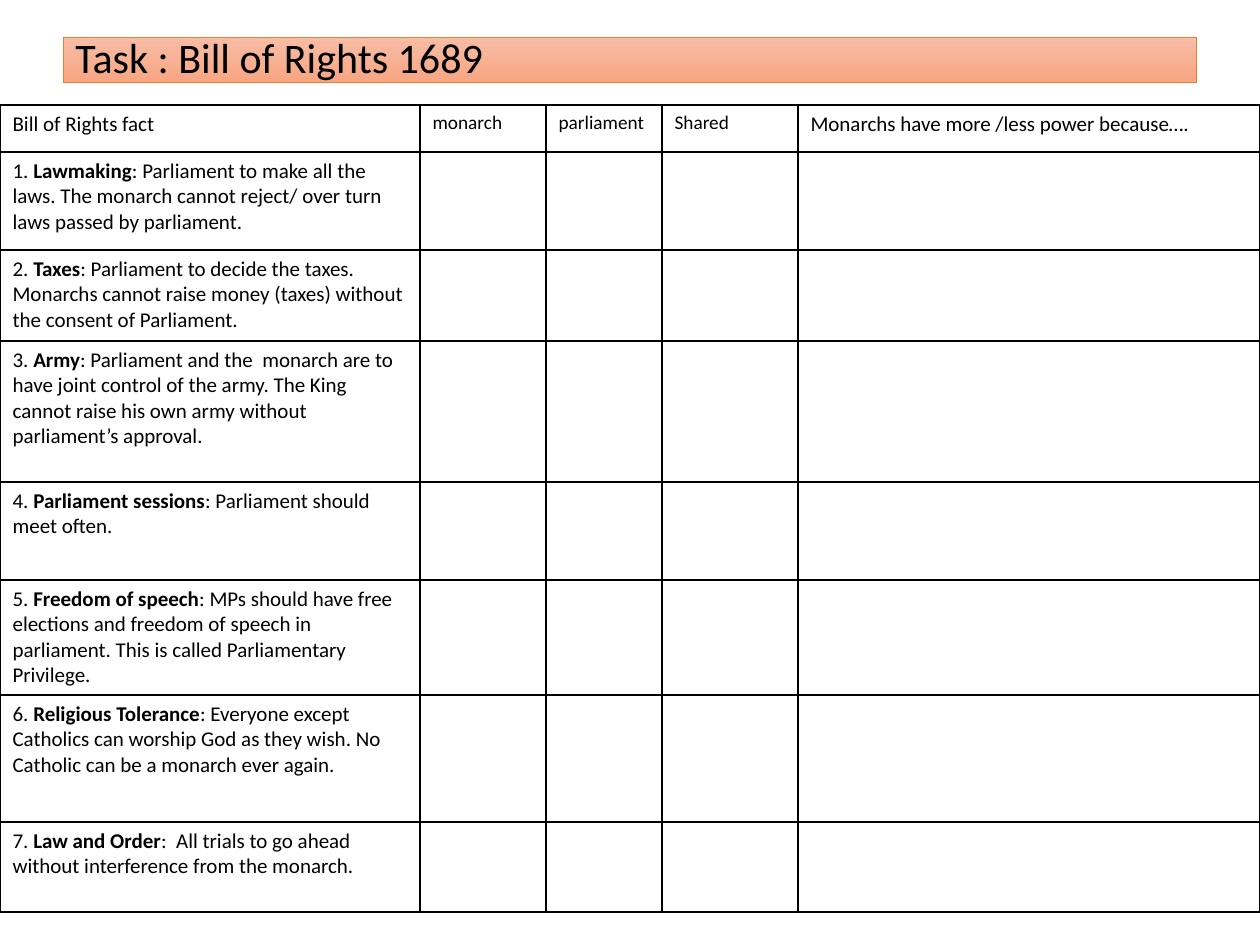
from typing import NamedTuple

from lxml.etree import SubElement
from pptx import Presentation
from pptx.dml.color import RGBColor
from pptx.enum.shapes import MSO_SHAPE
from pptx.enum.text import MSO_ANCHOR, PP_ALIGN
from pptx.oxml.ns import qn
from pptx.util import Emu, Pt

PX_PER_INCH = 126
BLACK = "000000"


class Header(NamedTuple):
    text: str
    width: int
    size: int


class Fact(NamedTuple):
    topic: str
    detail: str
    height: int


HEADER_HEIGHT = 47
HEADERS = [
    Header("Bill of Rights fact", 420, 12),
    Header("monarch", 126, 11),
    Header("parliament", 116, 11),
    Header("Shared", 136, 11),
    Header("Monarchs have more /less power because….", 462, 12),
]
FACTS = [
    Fact("Lawmaking", ": Parliament to make all the laws. The monarch cannot reject/ "
         "over turn laws passed by parliament.", 98),
    Fact("Taxes", ": Parliament to decide the taxes. Monarchs cannot raise money "
         "(taxes) without the consent of Parliament.", 91),
    Fact("Army", ": Parliament and the  monarch are to have joint control of the army. "
         "The King cannot raise his own army without parliament’s approval.", 141),
    Fact("Parliament sessions", ": Parliament should meet often.", 98),
    Fact("Freedom of speech", ": MPs should have free elections and freedom of speech "
         "in parliament. This is called Parliamentary Privilege.", 115),
    Fact("Religious Tolerance", ": Everyone except Catholics can worship God as they "
         "wish. No Catholic can be a monarch ever again.", 127),
    Fact("Law and Order", ":  All trials to go ahead without interference from the "
         "monarch.", 90),
]


def px(n: int) -> Emu:
    return Emu(round(n * 914400 / PX_PER_INCH))


def rgb(color: str) -> RGBColor:
    return RGBColor.from_string(color)


def add_run(p, text: str, size: int, bold: bool = False) -> None:
    r = p.add_run()
    r.text = text
    for name, value in {"name": "Calibri", "size": Pt(size), "bold": bold}.items():
        setattr(r.font, name, value)
    r.font.color.rgb = rgb(BLACK)


def add_title(s, text: str) -> None:
    sp = s.shapes.add_shape(MSO_SHAPE.RECTANGLE, px(63), px(37), px(1134), px(46))
    sp.shadow.inherit = False
    sp.fill.gradient()
    sp.fill.gradient_angle = 270
    for stop, color in zip(sp.fill.gradient_stops, ("F7BDA5", "F8A582")):
        stop.color.rgb = rgb(color)
    for stop, position in zip(sp.fill.gradient_stops, (0, 1)):
        stop.position = position
    sp.line.color.rgb = rgb("ED7D31")
    sp.line.width = Pt(0.5)
    tf = sp.text_frame
    tf.word_wrap = True
    tf.vertical_anchor = MSO_ANCHOR.MIDDLE
    p = tf.paragraphs[0]
    p.alignment = PP_ALIGN.LEFT
    p.line_spacing = 0.9
    add_run(p, text, 24)


def style_cell(cell) -> None:
    """Give the cell thin black borders and no fill."""
    tc_pr = cell._tc.get_or_add_tcPr()
    for side in ("a:lnL", "a:lnR", "a:lnT", "a:lnB"):
        ln = SubElement(tc_pr, qn(side), w=str(Pt(1)))
        fill = SubElement(ln, qn("a:solidFill"))
        SubElement(fill, qn("a:srgbClr"), val=BLACK)
    cell.fill.background()


def add_facts_table(s, headers: list[Header], facts: list[Fact]) -> None:
    heights = [HEADER_HEIGHT] + [fact.height for fact in facts]
    widths = [header.width for header in headers]
    table = s.shapes.add_table(len(heights), len(widths), 0, px(105),
                               px(sum(widths)), px(sum(heights))).table
    table.first_row = table.horz_banding = False
    for row, height in zip(table.rows, heights):
        row.height = px(height)
    for column, width in zip(table.columns, widths):
        column.width = px(width)
    for cell in table.iter_cells():
        style_cell(cell)
    for i, header in enumerate(headers):
        add_run(table.cell(0, i).text_frame.paragraphs[0], header.text, header.size)
    for i, fact in enumerate(facts, start=1):
        p = table.cell(i, 0).text_frame.paragraphs[0]
        add_run(p, f"{i}. ", 12)
        add_run(p, fact.topic, 12, bold=True)
        add_run(p, fact.detail, 12)


def main() -> None:
    prs = Presentation()
    prs.slide_width, prs.slide_height = px(1260), px(945)
    s = prs.slides.add_slide(prs.slide_layouts[6])
    add_title(s, "Task : Bill of Rights 1689")
    add_facts_table(s, HEADERS, FACTS)
    prs.save("out.pptx")


if __name__ == "__main__":
    main()
